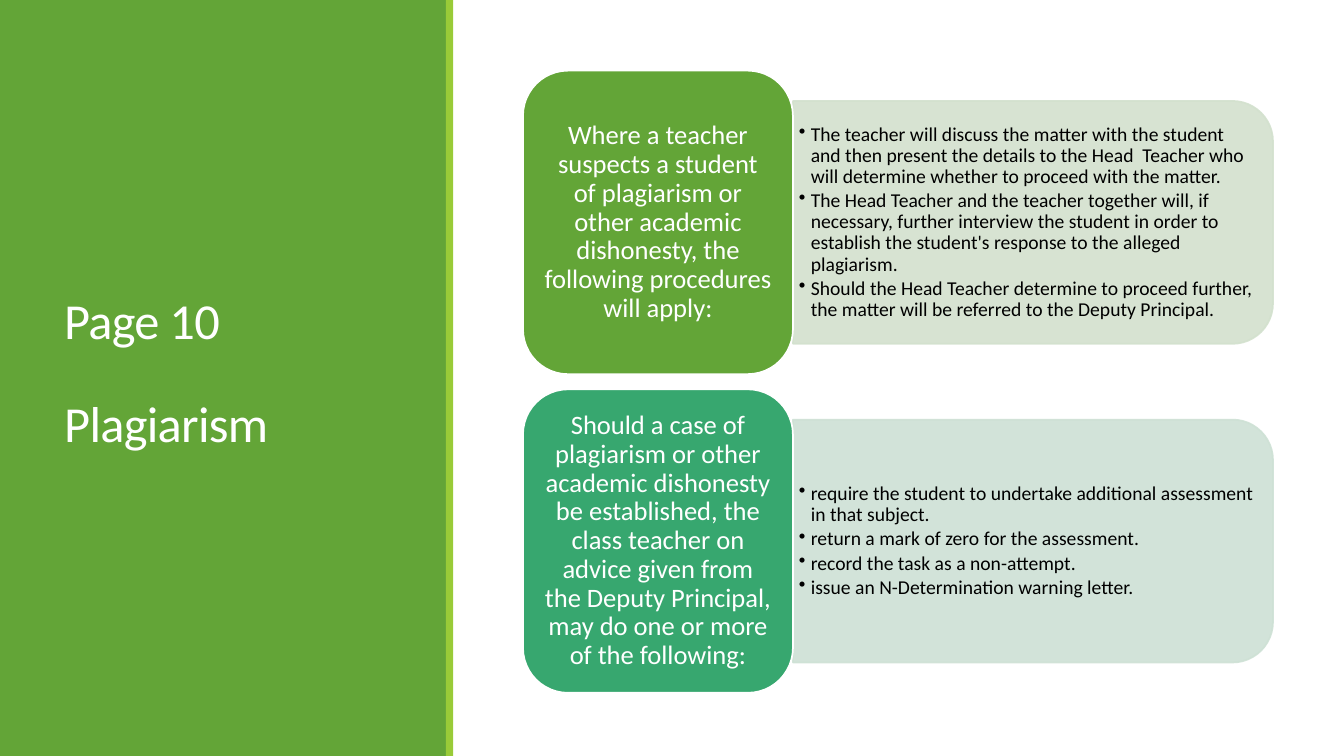
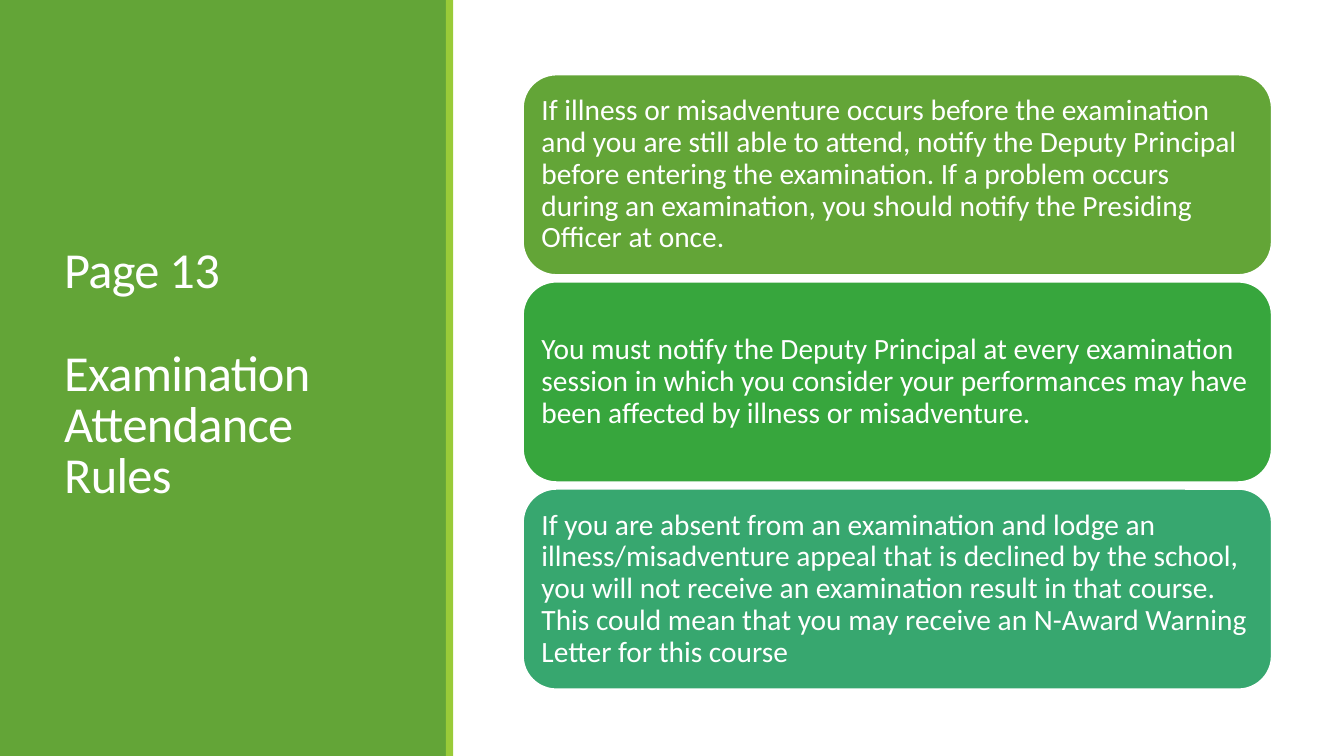
"""Build two slides on plagiarism and examination attendance rules."""
from dataclasses import dataclass

from lxml import etree
from pptx import Presentation
from pptx.dml.color import RGBColor
from pptx.enum.shapes import MSO_SHAPE
from pptx.enum.text import MSO_ANCHOR, PP_ALIGN
from pptx.oxml.ns import qn
from pptx.util import Cm, Pt

RECT = MSO_SHAPE.RECTANGLE
ROUNDED = MSO_SHAPE.ROUNDED_RECTANGLE
ROUND_TOP = MSO_SHAPE.ROUND_2_SAME_RECTANGLE
MIDDLE = MSO_ANCHOR.MIDDLE
LEFT, CENTER = PP_ALIGN.LEFT, PP_ALIGN.CENTER


@dataclass(frozen=True)
class Theme:
    """Colours, font and type sizes shared by the slides."""
    font: str = "Calibri"
    white: str = "FFFFFF"
    black: str = "000000"
    green: str = "63A537"
    lime: str = "99CB38"
    emerald: str = "37A63D"
    teal: str = "37A76F"
    pale_green: str = "D3E1CE"
    pale_teal: str = "CEE1D5"
    title_size: int = 36
    rule_size: int = 21
    heading_size: int = 19
    detail_size: int = 14
    outline: float = 1.25


@dataclass(frozen=True)
class Box:
    """A region in centimetres."""
    left: float
    top: float
    width: float
    height: float

    def lengths(self):
        """Return the region as slide lengths."""
        return Cm(self.left), Cm(self.top), Cm(self.width), Cm(self.height)

    def rows(self, count, gap):
        """Split the region into equal rows."""
        height = (self.height - gap * (count - 1)) / count
        return [Box(self.left, self.top + i * (height + gap), self.width, height)
                for i in range(count)]


THEME = Theme()
SLIDE = Box(0, 0, 33.87, 19.05)
PANEL_WIDTH = 11.24
STRIPE_WIDTH = 0.18
TITLE = Box(1.37, 1.45, 8.56, 16.03)
PROCEDURES = Box(13.18, 1.78, 18.9, 15.68)
RULES = Box(13.18, 1.88, 18.87, 15.49)
HEADING_SHARE = 0.36
DETAIL_SHARE = 0.8

PLAGIARISM = [
    ("Where a teacher suspects a student of plagiarism or other academic "
     "dishonesty, the following procedures will apply:",
     ["The teacher will discuss the matter with the student and then present "
      "the details to the Head  Teacher who will determine whether to proceed "
      "with the matter.",
      "The Head Teacher and the teacher together will, if necessary, further "
      "interview the student in order to establish the student's response to "
      "the alleged plagiarism.",
      "Should the Head Teacher determine to proceed further, the matter will "
      "be referred to the Deputy Principal."],
     THEME.green, THEME.pale_green),
    ("Should a case of plagiarism or other academic dishonesty be established, "
     "the class teacher on advice given from the Deputy Principal, may do one "
     "or more of the following:",
     ["require the student to undertake additional assessment in that subject.",
      "return a mark of zero for the assessment.",
      "record the task as a non-attempt.",
      "issue an N-Determination warning letter."],
     THEME.teal, THEME.pale_teal),
]

ATTENDANCE = [
    ("If illness or misadventure occurs before the examination and you are "
     "still able to attend, notify the Deputy Principal before entering the "
     "examination. If a problem occurs during an examination, you should "
     "notify the Presiding Officer at once.", THEME.green),
    ("You must notify the Deputy Principal at every examination session in "
     "which you consider your performances may have been affected by illness "
     "or misadventure.", THEME.emerald),
    ("If you are absent from an examination and lodge an illness/misadventure "
     "appeal that is declined by the school, you will not receive an "
     "examination result in that course. This could mean that you may receive "
     "an N-Award Warning Letter for this course", THEME.teal),
]


def add_block(slide, kind, box, fill, outline=None):
    """Add a filled shape, outlined when a line colour is given."""
    block = slide.shapes.add_shape(kind, *box.lengths())
    block.shadow.inherit = False
    block.fill.solid()
    block.fill.fore_color.rgb = RGBColor.from_string(fill)
    if outline:
        block.line.color.rgb = RGBColor.from_string(outline)
        block.line.width = Pt(THEME.outline)
    else:
        block.line.fill.background()
    return block


def write(holder, lines, size, color, spacing=0.9, align=LEFT, inset=(0.25, 0.13)):
    """Fill a shape with vertically centred paragraphs and return them."""
    frame = holder.text_frame
    frame.word_wrap = True
    frame.vertical_anchor = MIDDLE
    frame.margin_left = frame.margin_right = Cm(inset[0])
    frame.margin_top = frame.margin_bottom = Cm(inset[1])
    frame.text = "\n".join(lines)
    for paragraph in frame.paragraphs:
        paragraph.alignment = align
        paragraph.line_spacing = spacing
        paragraph.font.name = THEME.font
        paragraph.font.size = Pt(size)
        paragraph.font.color.rgb = RGBColor.from_string(color)
    return frame.paragraphs


def add_bullet(paragraph):
    """Give a paragraph a bullet and a hanging indent."""
    properties = paragraph._p.get_or_add_pPr()
    properties.set("marL", str(Cm(0.3)))
    properties.set("indent", str(-Cm(0.3)))
    paragraph.space_after = Pt(2.1)
    bullet = etree.Element(qn("a:buChar"), char="•")
    properties.find(qn("a:spcAft")).addnext(bullet)


def add_side_panel(slide, title_lines):
    """Add the coloured side panel, its stripe and the title."""
    add_block(slide, RECT, Box(0, 0, PANEL_WIDTH, SLIDE.height), THEME.green)
    add_block(slide, RECT, Box(PANEL_WIDTH, 0, STRIPE_WIDTH, SLIDE.height), THEME.lime)
    title = slide.shapes.add_textbox(*TITLE.lengths())
    paragraphs = write(title, title_lines, THEME.title_size, THEME.white, 0.85)
    for paragraph in paragraphs[1:]:
        paragraph.space_before = Pt(37)
    for paragraph in paragraphs:
        for run in paragraph.runs:
            run.font._element.set("spc", "-50")


def add_procedure(slide, box, heading, details, color, pale):
    """Add a heading block with its bulleted details on the right."""
    heading_width = box.width * HEADING_SHARE
    height = box.height * DETAIL_SHARE
    detail_box = Box(box.left + heading_width, box.top + (box.height - height) / 2,
                     box.width - heading_width, height)
    turn = (detail_box.width - height) / 2
    upright = Box(detail_box.left + turn, detail_box.top - turn, height, detail_box.width)
    backing = add_block(slide, ROUND_TOP, upright, pale, pale)
    backing.rotation = 90
    for color_node in backing._element.spPr.iter(qn("a:srgbClr")):
        etree.SubElement(color_node, qn("a:alpha"), val="90000")
    text_box = Box(detail_box.left, detail_box.top, detail_box.width - 0.3, height)
    detail_text = slide.shapes.add_textbox(*text_box.lengths())
    for paragraph in write(detail_text, details, THEME.detail_size, THEME.black,
                           inset=(0.15, 0.08)):
        add_bullet(paragraph)
    heading_box = Box(box.left, box.top, heading_width, box.height)
    heading_block = add_block(slide, ROUNDED, heading_box, color, THEME.white)
    write(heading_block, [heading], THEME.heading_size, THEME.white,
          align=CENTER, inset=(0.2, 0.1))


def build_procedures(slide, title_lines, procedures, box):
    """Build a slide of headings with bulleted details."""
    add_side_panel(slide, title_lines)
    for row, procedure in zip(box.rows(len(procedures), 0.38), procedures):
        add_procedure(slide, row, *procedure)


def build_rules(slide, title_lines, rules, box):
    """Build a slide of stacked rules."""
    add_side_panel(slide, title_lines)
    for row, (rule, color) in zip(box.rows(len(rules), 0.17), rules):
        rule_block = add_block(slide, ROUNDED, row, color, THEME.white)
        write(rule_block, [rule], THEME.rule_size, THEME.white, inset=(0.22, 0.22))


def main():
    """Create and save the presentation."""
    deck = Presentation()
    deck.slide_width, deck.slide_height = Cm(SLIDE.width), Cm(SLIDE.height)
    blank = deck.slide_layouts[6]
    build_procedures(deck.slides.add_slide(blank), ["Page 10", "Plagiarism"],
                     PLAGIARISM, PROCEDURES)
    build_rules(deck.slides.add_slide(blank),
                ["Page 13", "Examination Attendance Rules"], ATTENDANCE, RULES)
    deck.save("out.pptx")


if __name__ == "__main__":
    main()
